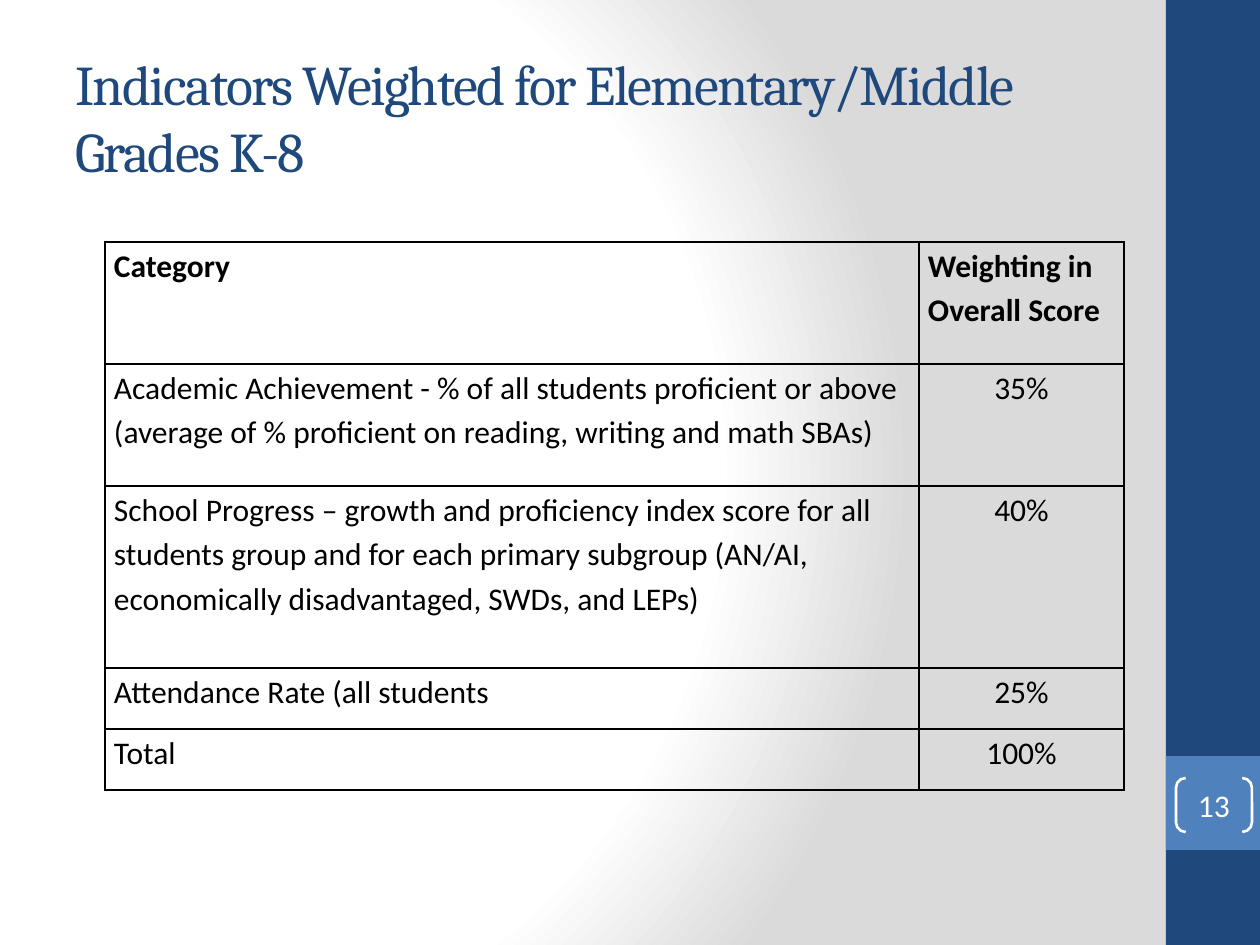
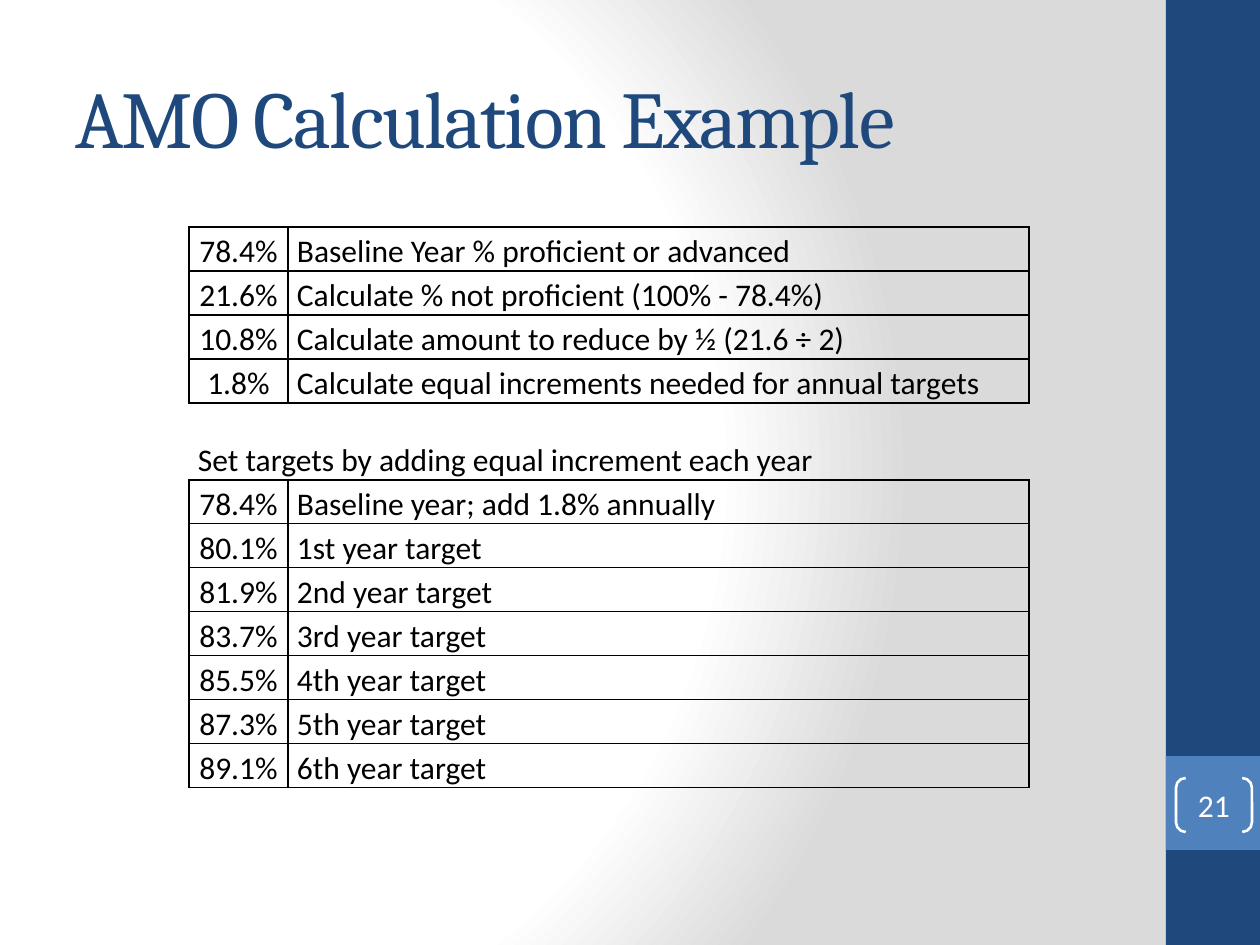
from lxml import etree
from pptx import Presentation
from pptx.dml.color import RGBColor
from pptx.enum.shapes import MSO_SHAPE
from pptx.enum.text import MSO_ANCHOR, PP_ALIGN
from pptx.oxml import parse_xml
from pptx.oxml.ns import nsdecls, qn
from pptx.util import Emu, Pt

SLIDE = (1260, 945)
NAVY, BLUE, WHITE, BLACK, GREY = "1F497D", "4F81BD", "FFFFFF", "000000", "DADADA"
TITLE_BOX = (63, 38, 1050, 157)
SIDE_BOX = (1166, 0, 94, 945)
BODY = {"name": "Calibri", "size": Pt(18)}
NO_STYLE = "{2D5ABB26-0587-4C30-8999-92F81FD0307C}"

WEIGHTS = [
    ("Category", "Weighting in Overall Score"),
    ("Academic Achievement - % of all students proficient or above "
     "(average of % proficient on reading, writing and math SBAs)", "35%"),
    ("School Progress – growth and proficiency index score for all students group "
     "and for each primary subgroup (AN/AI, economically disadvantaged, SWDs, and LEPs)", "40%"),
    ("Attendance Rate (all students", "25%"),
    ("Total", "100%"),
]
BASELINE = [
    ("78.4%", "Baseline Year % proficient or advanced"),
    ("21.6%", "Calculate % not proficient (100% - 78.4%)"),
    ("10.8%", "Calculate amount to reduce by ½ (21.6 ÷ 2)"),
    ("1.8%", "Calculate equal increments needed for annual targets"),
]
TARGETS_NOTE = "Set targets by adding equal increment each year"
YEARS = zip(("80.1%", "81.9%", "83.7%", "85.5%", "87.3%", "89.1%"),
            ("1st", "2nd", "3rd", "4th", "5th", "6th"))
TARGETS = [("78.4%", "Baseline year; add 1.8% annually"),
           *((share, f"{year} year target") for share, year in YEARS)]


def px(n):
    """Turn pixels into EMU."""
    return Emu(round(n * 914400 / 126))


def rgb(color):
    """Turn a hex string into a colour."""
    return RGBColor.from_string(color)


def set_all(obj, **values):
    """Set several attributes of one object."""
    for name, value in values.items():
        setattr(obj, name, value)


def write(tf, text, color, font, align=PP_ALIGN.LEFT, spacing=1.0):
    """Write one formatted paragraph and return its run."""
    p = tf.paragraphs[0]
    set_all(p, alignment=align, line_spacing=spacing)
    r = p.add_run()
    r.text = text
    set_all(r.font, **font)
    r.font.color.rgb = rgb(color)
    return r


def add_background(s):
    """Fill the slide with a round gradient from white to grey."""
    stops = "".join(f'<a:gs pos="{pos}000"><a:srgbClr val="{color}"/></a:gs>'
                    for pos, color in ((0, WHITE), (75, WHITE), (100, GREY)))
    bg = parse_xml(
        f'<p:bg {nsdecls("p", "a")}><p:bgPr><a:gradFill rotWithShape="1">'
        f'<a:gsLst>{stops}</a:gsLst><a:path path="circle">'
        '<a:fillToRect l="20000" t="50000" r="100000" b="50000"/></a:path>'
        '</a:gradFill><a:effectLst/></p:bgPr></p:bg>')
    s.element.cSld.insert(0, bg)


def add_band(s, box, color):
    """Add a plain filled rectangle."""
    sp = s.shapes.add_shape(MSO_SHAPE.RECTANGLE, *map(px, box))
    sp.shadow.inherit = False
    sp.fill.solid()
    sp.fill.fore_color.rgb = rgb(color)
    sp.line.fill.background()


def add_side(s, box, number):
    """Add the side band with the bracketed slide number."""
    x, y, w, h = box
    add_band(s, box, NAVY)
    add_band(s, (x, y + 756, w, w), BLUE)
    sp = s.shapes.add_shape(MSO_SHAPE.DOUBLE_BRACKET,
                            *map(px, (x + 10, y + 778, w - 18, 54)))
    sp.adjustments[0] = 0.18
    sp.shadow.inherit = False
    sp.fill.background()
    sp.line.color.rgb = rgb(WHITE)
    sp.line.width = Pt(1.5)
    tf = sp.text_frame
    set_all(tf, margin_left=0, margin_top=0, margin_right=0, margin_bottom=0,
            vertical_anchor=MSO_ANCHOR.MIDDLE)
    write(tf, str(number), WHITE, BODY, PP_ALIGN.CENTER)


def add_title(s, box, text, size):
    """Add the slide title with tightened letters."""
    tf = s.shapes.add_textbox(*map(px, box)).text_frame
    set_all(tf, word_wrap=True, vertical_anchor=MSO_ANCHOR.MIDDLE)
    r = write(tf, text, NAVY, {"name": "Cambria", "size": Pt(size)})
    r.font._element.set("spc", "-100")


def add_borders(cell, sides):
    """Draw thin black lines on the given sides, in L R T B order."""
    tcPr = cell._tc.get_or_add_tcPr()
    for i, side in enumerate(sides):
        ln = etree.Element(qn(f"a:ln{side}"), w="12700")
        fill = etree.SubElement(ln, qn("a:solidFill"))
        etree.SubElement(fill, qn("a:srgbClr"), val=BLACK)
        tcPr.insert(i, ln)


def add_grid(s, at, cols, rows):
    """Add an unfilled table with no style and return it."""
    frame = s.shapes.add_table(len(rows), len(cols),
                               *map(px, (*at, sum(cols), sum(rows))))
    table = frame.table
    set_all(table, first_row=False, horz_banding=False)
    table._tbl.tblPr.find(qn("a:tableStyleId")).text = NO_STYLE
    for col, width in zip(table.columns, cols):
        col.width = px(width)
    for row, height in zip(table.rows, rows):
        row.height = px(height)
    for cell in table.iter_cells():
        set_all(cell, margin_left=px(9), margin_right=px(9), margin_top=0, margin_bottom=0)
        cell.fill.background()
    return table


def fill_cell(cell, text, align=PP_ALIGN.LEFT, anchor=MSO_ANCHOR.TOP, bold=False, sides="LRTB"):
    """Write and outline one table cell."""
    cell.vertical_anchor = anchor
    write(cell.text_frame, text, BLACK, {**BODY, "bold": bold}, align, 1.15)
    add_borders(cell, sides)


def add_weights(s, at):
    """Add the table of indicator weights."""
    table = add_grid(s, at, (814, 205), (122, 122, 182, 61, 61))
    for i, texts in enumerate(WEIGHTS):
        for j, text in enumerate(texts):
            align = PP_ALIGN.CENTER if i and j else PP_ALIGN.LEFT
            fill_cell(table.cell(i, j), text, align, bold=i == 0)


def add_targets(s, at):
    """Add the table of baseline steps and yearly targets."""
    lines = [None, *BASELINE, TARGETS_NOTE, *TARGETS]
    heights = [38 if line is None else 77 if line == TARGETS_NOTE else 44 for line in lines]
    table = add_grid(s, at, (99, 741), heights)
    for i, line in enumerate(lines):
        left, right = table.cell(i, 0), table.cell(i, 1)
        if isinstance(line, tuple):
            fill_cell(left, line[0], PP_ALIGN.CENTER, MSO_ANCHOR.BOTTOM)
            fill_cell(right, line[1], anchor=MSO_ANCHOR.BOTTOM)
            continue
        left.merge(right)
        sides = "TB" if line else "B"
        add_borders(right, sides)
        if line:
            fill_cell(left, line, anchor=MSO_ANCHOR.BOTTOM, sides=sides)
        else:
            add_borders(left, sides)


def add_slide(prs, title, size, number):
    """Add a slide with the shared background, side band and title."""
    s = prs.slides.add_slide(prs.slide_layouts[6])
    add_background(s)
    add_side(s, SIDE_BOX, number)
    add_title(s, TITLE_BOX, title, size)
    return s


def main():
    """Build and save the two slides."""
    prs = Presentation()
    prs.slide_width, prs.slide_height = map(px, SLIDE)
    s = add_slide(prs, "Indicators Weighted for Elementary/Middle Grades K-8", 32, 13)
    add_weights(s, (105, 242))
    s = add_slide(prs, "AMO Calculation Example", 46, 21)
    add_targets(s, (189, 189))
    prs.save("out.pptx")


if __name__ == "__main__":
    main()
